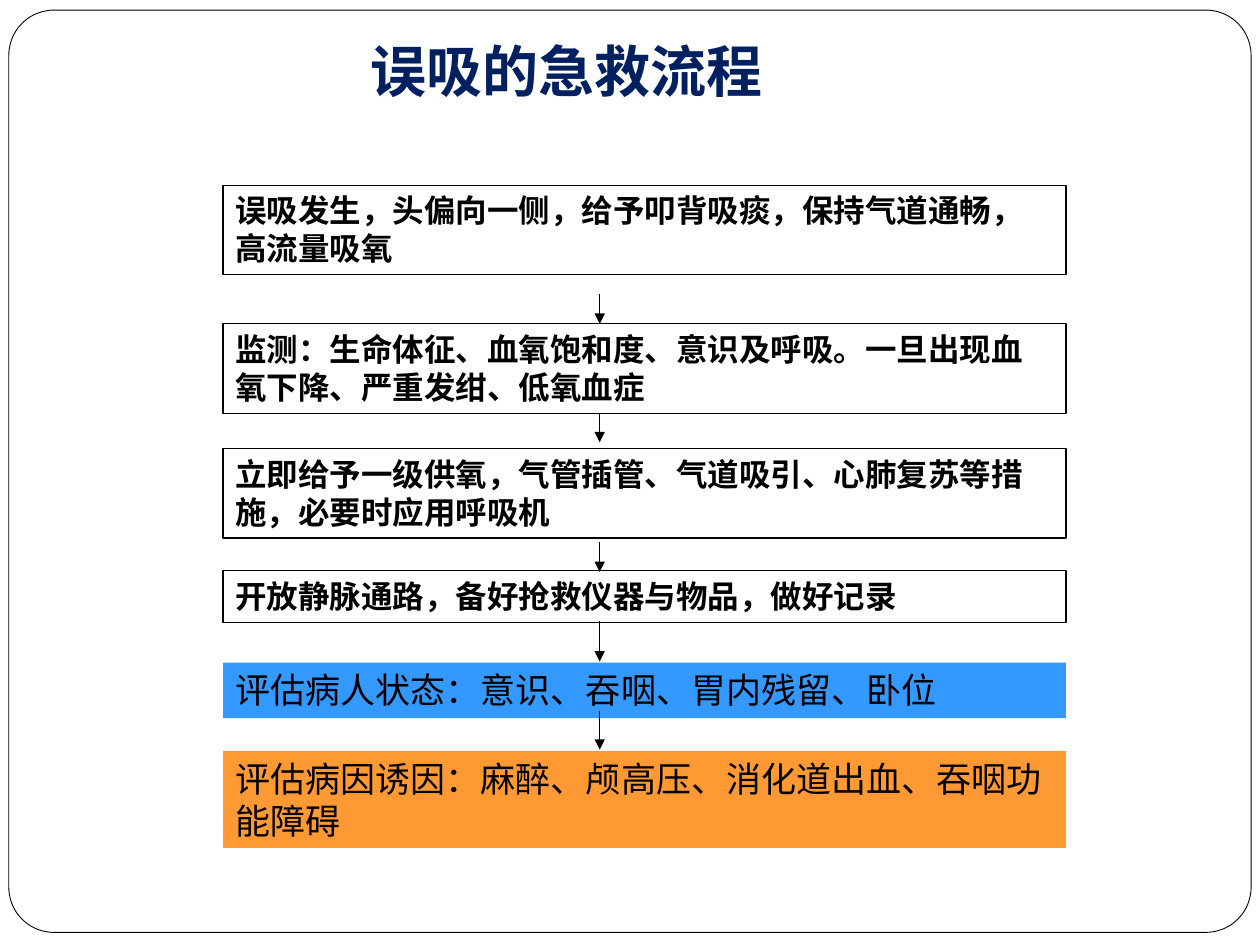
from lxml import etree
from pptx import Presentation
from pptx.dml.color import RGBColor
from pptx.enum.shapes import MSO_CONNECTOR, MSO_SHAPE
from pptx.enum.text import MSO_ANCHOR, MSO_AUTO_SIZE, PP_ALIGN
from pptx.oxml.ns import qn
from pptx.util import Inches, Pt

RECT, ROUNDED = MSO_SHAPE.RECTANGLE, MSO_SHAPE.ROUNDED_RECTANGLE
STRAIGHT = MSO_CONNECTOR.STRAIGHT
LEFT, CENTER = PP_ALIGN.LEFT, PP_ALIGN.CENTER
TOP, BOTTOM = MSO_ANCHOR.TOP, MSO_ANCHOR.BOTTOM
GROW = MSO_AUTO_SIZE.SHAPE_TO_FIT_TEXT

SANS, SERIF = "Noto Sans CJK SC", "Times New Roman"
BLACK, WHITE, NAVY = "000000", "FFFFFF", "002060"
BLUE, ORANGE = "3399FF", "FF9933"

# Steps: top, height, text, fill (white steps are outlined and bold)
STEPS = [
    (1.47, 0.71, "误吸发生，头偏向一侧，给予叩背吸痰，保持气道通畅，高流量吸氧", WHITE),
    (2.57, 0.71, "监测：生命体征、血氧饱和度、意识及呼吸。一旦出现血氧下降、严重发绀、低氧血症", WHITE),
    (3.56, 0.71, "立即给予一级供氧，气管插管、气道吸引、心肺复苏等措施，必要时应用呼吸机", WHITE),
    (4.53, 0.41, "开放静脉通路，备好抢救仪器与物品，做好记录", WHITE),
    (5.26, 0.44, "评估病人状态：意识、吞咽、胃内残留、卧位", BLUE),
    (5.96, 0.77, "评估病因诱因：麻醉、颅高压、消化道出血、吞咽功能障碍", ORANGE),
]
# Arrows between the steps: start and end height
ARROWS = [(2.33, 2.57), (3.28, 3.51), (4.3, 4.54), (4.93, 5.25), (5.64, 5.95)]


def rgb(color):
    return RGBColor.from_string(color)


def write(tf, text, size, color, font, bold, align=LEFT, anchor=TOP):
    tf.word_wrap = True
    tf.vertical_anchor = anchor
    p = tf.paragraphs[0]
    p.text = text
    p.alignment = align
    p.font.size = Pt(size)
    p.font.bold = bold
    p.font.color.rgb = rgb(color)
    p.font.name = font
    # East Asian glyphs take their own typeface
    props = p._p.pPr.find(qn("a:defRPr"))
    etree.SubElement(props, qn("a:ea"), typeface=SANS)


def add_box(s, kind, left, top, width, height, fill, line_width=None):
    sp = s.shapes.add_shape(kind, Inches(left), Inches(top), Inches(width), Inches(height))
    sp.shadow.inherit = False
    sp.fill.solid()
    sp.fill.fore_color.rgb = rgb(fill)
    if line_width is None:
        sp.line.fill.background()
    else:
        sp.line.color.rgb = rgb(BLACK)
        sp.line.width = Pt(line_width)
    return sp


def add_frame(s, left, top, width, height):
    frame = add_box(s, ROUNDED, left, top, width, height, WHITE, 0.5)
    frame.adjustments[0] = 0.049


def add_title(s, left, top, width, height):
    title = s.shapes.add_textbox(Inches(left), Inches(top), Inches(width), Inches(height))
    tf = title.text_frame
    tf.margin_bottom = Inches(0.1)
    write(tf, "误吸的急救流程", 32, NAVY, SANS, True, CENTER, BOTTOM)


def add_arrow(s, x, start, end):
    arrow = s.shapes.add_connector(STRAIGHT, Inches(x), Inches(start), Inches(x), Inches(end))
    arrow.line.color.rgb = rgb(BLACK)
    arrow.line.width = Pt(0.75)
    etree.SubElement(arrow.line._get_or_add_ln(), qn("a:tailEnd"), type="triangle")
    etree.SubElement(arrow._element.spPr, qn("a:effectLst"))


def add_flow(s, left, width):
    for top, height, text, fill in STEPS:
        action = fill == WHITE
        step = add_box(s, RECT, left, top, width, height, fill, 0.75 if action else None)
        size, font = (18, SANS) if action else (20, SERIF)
        write(step.text_frame, text, size, BLACK, font, action)
        step.text_frame.auto_size = GROW
    for start, end in ARROWS:
        add_arrow(s, left + 2.99, start, end)


def main():
    prs = Presentation()
    prs.slide_width, prs.slide_height = Inches(10), Inches(7.5)
    s = prs.slides.add_slide(prs.slide_layouts[6])
    add_frame(s, 0.07, 0.08, 9.86, 7.32)
    add_title(s, 0, 0.13, 9, 0.79)
    add_flow(s, 1.77, 6.69)
    prs.save("out.pptx")


if __name__ == "__main__":
    main()
